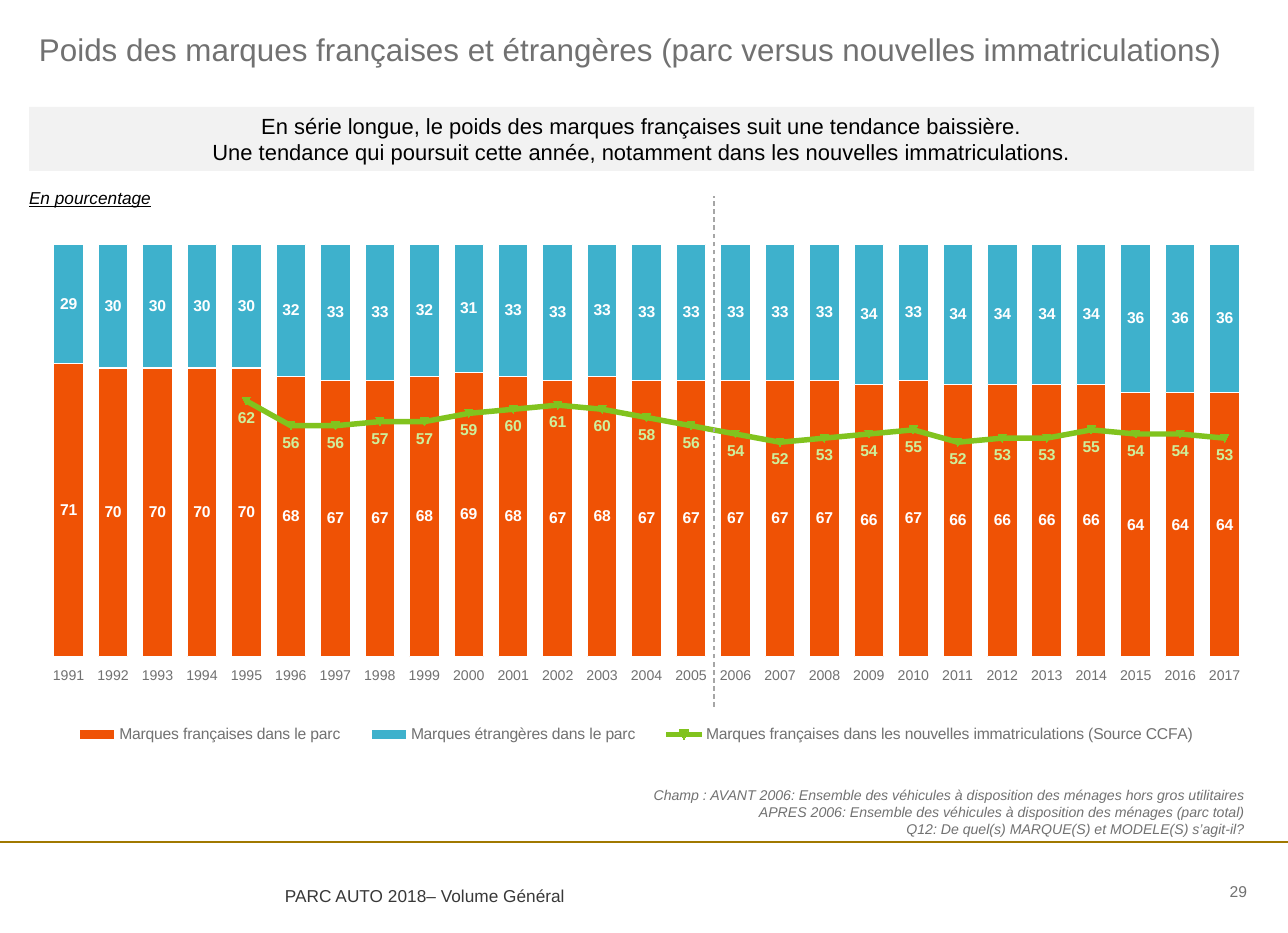
from dataclasses import dataclass

from lxml.etree import SubElement
from pptx import Presentation
from pptx.chart.data import CategoryChartData
from pptx.dml.color import RGBColor
from pptx.enum.chart import XL_CHART_TYPE as ChartType
from pptx.enum.chart import XL_LABEL_POSITION as LabelPos
from pptx.enum.chart import XL_LEGEND_POSITION as LegendPos
from pptx.enum.chart import XL_MARKER_STYLE as Marker
from pptx.enum.chart import XL_TICK_MARK as Tick
from pptx.enum.dml import MSO_LINE as Dash
from pptx.enum.shapes import MSO_CONNECTOR, MSO_SHAPE
from pptx.enum.text import MSO_ANCHOR as Anchor
from pptx.enum.text import PP_ALIGN as Align
from pptx.oxml import parse_xml
from pptx.oxml.ns import nsdecls, qn
from pptx.util import Emu, Pt

EMU_PER_PX = 8106


@dataclass(frozen=True)
class Theme:
    font: str = "Arial"
    grey: str = "717171"
    dark: str = "383838"
    black: str = "000000"
    white: str = "FFFFFF"
    banner: str = "F2F2F2"
    gold: str = "A07800"
    dash: str = "A6A6A6"
    french: str = "EF5205"
    foreign: str = "3EB1CC"
    new_cars: str = "81C31E"
    new_label: str = "CEF09C"
    title: int = 20
    message: int = 14
    caption: int = 11
    small: int = 10
    tiny: int = 9


@dataclass(frozen=True)
class Box:
    left: int
    top: int
    width: int
    height: int


@dataclass(frozen=True)
class Label:
    box: Box
    lines: tuple[str, ...]
    size: int
    color: str
    align: Align = Align.LEFT
    anchor: Anchor = Anchor.TOP
    inset: tuple[int, int] = (0, 0)
    italic: bool = False
    underline: bool = False


@dataclass(frozen=True)
class Rule:
    start: tuple[int, int]
    end: tuple[int, int]
    color: str
    width: float
    dash: Dash | None = None


@dataclass(frozen=True)
class Measure:
    name: str
    values: tuple[int | None, ...]
    color: str
    label_color: str


T = Theme()
YEARS = range(1991, 2018)
FRENCH = (71, 70, 70, 70, 70, 68, 67, 67, 68, 69, 68, 67, 68, 67,
          67, 67, 67, 67, 66, 67, 66, 66, 66, 66, 64, 64, 64)
FOREIGN = (29, 30, 30, 30, 30, 32, 33, 33, 32, 31, 33, 33, 33, 33,
           33, 33, 33, 33, 34, 33, 34, 34, 34, 34, 36, 36, 36)
NEW_CARS = (None,) * 4 + (62, 56, 56, 57, 57, 59, 60, 61, 60, 58, 56, 54,
                          52, 53, 54, 55, 52, 53, 53, 55, 54, 54, 53)
MEASURES = (
    Measure("Marques françaises dans le parc", FRENCH, T.french, T.white),
    Measure("Marques étrangères dans le parc", FOREIGN, T.foreign, T.white),
    Measure("Marques françaises dans les nouvelles immatriculations (Source CCFA)",
            NEW_CARS, T.new_cars, T.new_label),
)
LABELS = (
    Label(Box(1157, 880, 90, 23), ("29",), T.small, T.grey, Align.RIGHT, Anchor.MIDDLE),
    Label(Box(285, 885, 363, 27), ("PARC AUTO 2018– Volume Général",), T.caption, T.dark),
    Label(Box(485, 781, 769, 61),
          ("Champ : AVANT 2006: Ensemble des véhicules à disposition des ménages hors gros utilitaires",
           "APRES 2006: Ensemble des véhicules à disposition des ménages (parc total)",
           "Q12: De quel(s) MARQUE(S) et MODELE(S) s’agit-il?"),
          T.tiny, T.grey, Align.RIGHT, inset=(10, 5), italic=True),
    Label(Box(29, 187, 168, 21), ("En pourcentage",), T.caption, T.black,
          italic=True, underline=True),
)
TITLE = Label(Box(39, 0, 1208, 68),
              ("Poids des marques françaises et étrangères (parc versus nouvelles immatriculations)",),
              T.title, T.grey, anchor=Anchor.BOTTOM)
MESSAGE = Label(Box(29, 107, 1225, 64),
                ("En série longue, le poids des marques françaises suit une tendance baissière.",
                 "Une tendance qui poursuit cette année, notamment dans les nouvelles immatriculations."),
                T.message, T.black, Align.CENTER, Anchor.MIDDLE, (10, 5))
FOOTER_RULE = Rule((0, 842), (1288, 842), T.gold, 1.5)
SCOPE_CHANGE = Rule((714, 707), (714, 196), T.dash, 0.75, Dash.DASH)
CHART_BOX = Box(29, 227, 1239, 561)


def px(n: int) -> Emu:
    return Emu(n * EMU_PER_PX)


def frame(box: Box) -> tuple[Emu, ...]:
    return px(box.left), px(box.top), px(box.width), px(box.height)


def rgb(color: str) -> RGBColor:
    return RGBColor.from_string(color)


def style_font(font, size: int, color: str, **flags: bool) -> None:
    font.name, font.size = T.font, Pt(size)
    font.color.rgb = rgb(color)
    for name, value in flags.items():
        setattr(font, name, value)


def write(sp, label: Label) -> None:
    tf = sp.text_frame
    tf.word_wrap = True
    tf.vertical_anchor = label.anchor
    tf.margin_left = tf.margin_right = px(label.inset[0])
    tf.margin_top = tf.margin_bottom = px(label.inset[1])
    for i, line in enumerate(label.lines):
        p = tf.paragraphs[0] if i == 0 else tf.add_paragraph()
        p.alignment = label.align
        r = p.add_run()
        r.text = line
        style_font(r.font, label.size, label.color,
                   italic=label.italic, underline=label.underline)


def add_rule(slide, rule: Rule) -> None:
    points = [px(n) for n in rule.start + rule.end]
    sp = slide.shapes.add_connector(MSO_CONNECTOR.STRAIGHT, *points)
    sp.line.color.rgb = rgb(rule.color)
    sp.line.width = Pt(rule.width)
    if rule.dash:
        sp.line.dash_style = rule.dash
    SubElement(sp._element.spPr, qn("a:effectLst"))


def place(parent, index: int, inner: bool, x: float, y: float, w: float, h: float) -> None:
    """Give a chart part a manual layout, in fractions of the chart."""
    for old in parent.findall(qn("c:layout")):
        parent.remove(old)
    target = '<c:layoutTarget val="inner"/>' if inner else ""
    sizes = "".join(f'<c:{k} val="{v}"/>' for k, v in zip("xywh", (x, y, w, h)))
    parent.insert(index, parse_xml(
        f'<c:layout {nsdecls("c")}><c:manualLayout>{target}<c:xMode val="edge"/>'
        f'<c:yMode val="edge"/>{sizes}</c:manualLayout></c:layout>'))


def move_last_series_to_line(chart) -> None:
    bars = chart.plots[0]._element
    ser = bars.findall(qn("c:ser"))[-1]
    for tag in ser.findall(qn("c:invertIfNegative")):
        ser.remove(tag)
    axes = "".join(f'<c:axId val="{a.get("val")}"/>' for a in bars.findall(qn("c:axId")))
    line = parse_xml(f'<c:lineChart {nsdecls("c")}><c:grouping val="standard"/>'
                     f'<c:varyColors val="0"/><c:marker val="1"/>{axes}</c:lineChart>')
    line.insert(2, ser)
    bars.addnext(line)


def add_share_chart(slide) -> None:
    data = CategoryChartData(number_format="0")
    data.categories = [str(year) for year in YEARS]
    for m in MEASURES:
        data.add_series(m.name, m.values)
    chart = slide.shapes.add_chart(ChartType.COLUMN_STACKED, *frame(CHART_BOX), data).chart
    move_last_series_to_line(chart)
    style_font(chart.font, T.small, T.grey)
    chart.has_title = False

    bars, line = chart.plots
    bars.gap_width, bars.overlap = 50, 100
    bars.vary_by_categories = False
    for ser, m in zip([*bars.series, *line.series], MEASURES):
        labels = ser.data_labels
        labels.show_value = True
        labels.number_format, labels.number_format_is_linked = "0", False
        style_font(labels.font, T.small, m.label_color, bold=True)
    for ser, m in zip(bars.series, MEASURES):
        ser.format.fill.solid()
        ser.format.fill.fore_color.rgb = rgb(m.color)
        ser.format.line.color.rgb = rgb(T.white)
        ser.format.line.width = Pt(0.75)

    trend = line.series[0]
    trend.smooth = False
    trend.format.line.color.rgb = rgb(T.new_cars)
    trend.format.line.width = Pt(3.5)
    trend.marker.style, trend.marker.size = Marker.AUTOMATIC, 5
    for fill in (trend.marker.format.fill, trend.marker.format.line.fill):
        fill.solid()
        fill.fore_color.rgb = rgb(T.new_cars)
    trend.data_labels.position = LabelPos.BELOW

    shares, years = chart.value_axis, chart.category_axis
    shares.minimum_scale, shares.maximum_scale = 0, 100
    shares.has_major_gridlines = shares.visible = False
    years.major_tick_mark = Tick.OUTSIDE
    years.format.line.fill.background()
    style_font(years.tick_labels.font, T.tiny, T.grey)

    chart.has_legend = True
    chart.legend.position = LegendPos.BOTTOM
    chart.legend.include_in_layout = False
    style_font(chart.legend.font, T.small, T.grey)
    place(chart.legend._element, 1, False, 0.02, 0.88, 0.94, 0.05)
    place(chart._chartSpace.chart.plotArea, 0, True, 0.014, 0.031, 0.969, 0.735)


def main() -> None:
    prs = Presentation()
    prs.slide_width, prs.slide_height = px(1288), px(933)
    slide = prs.slides.add_slide(prs.slide_layouts[5])
    add_rule(slide, FOOTER_RULE)
    title = slide.shapes.title
    title.left, title.top, title.width, title.height = frame(TITLE.box)
    write(title, TITLE)
    for label in LABELS:
        write(slide.shapes.add_textbox(*frame(label.box)), label)
    add_share_chart(slide)
    banner = slide.shapes.add_shape(MSO_SHAPE.ROUNDED_RECTANGLE, *frame(MESSAGE.box))
    banner.adjustments[0] = 0
    banner.shadow.inherit = False
    banner.fill.solid()
    banner.fill.fore_color.rgb = rgb(T.banner)
    banner.line.fill.background()
    write(banner, MESSAGE)
    add_rule(slide, SCOPE_CHANGE)
    prs.save("out.pptx")


if __name__ == "__main__":
    main()
